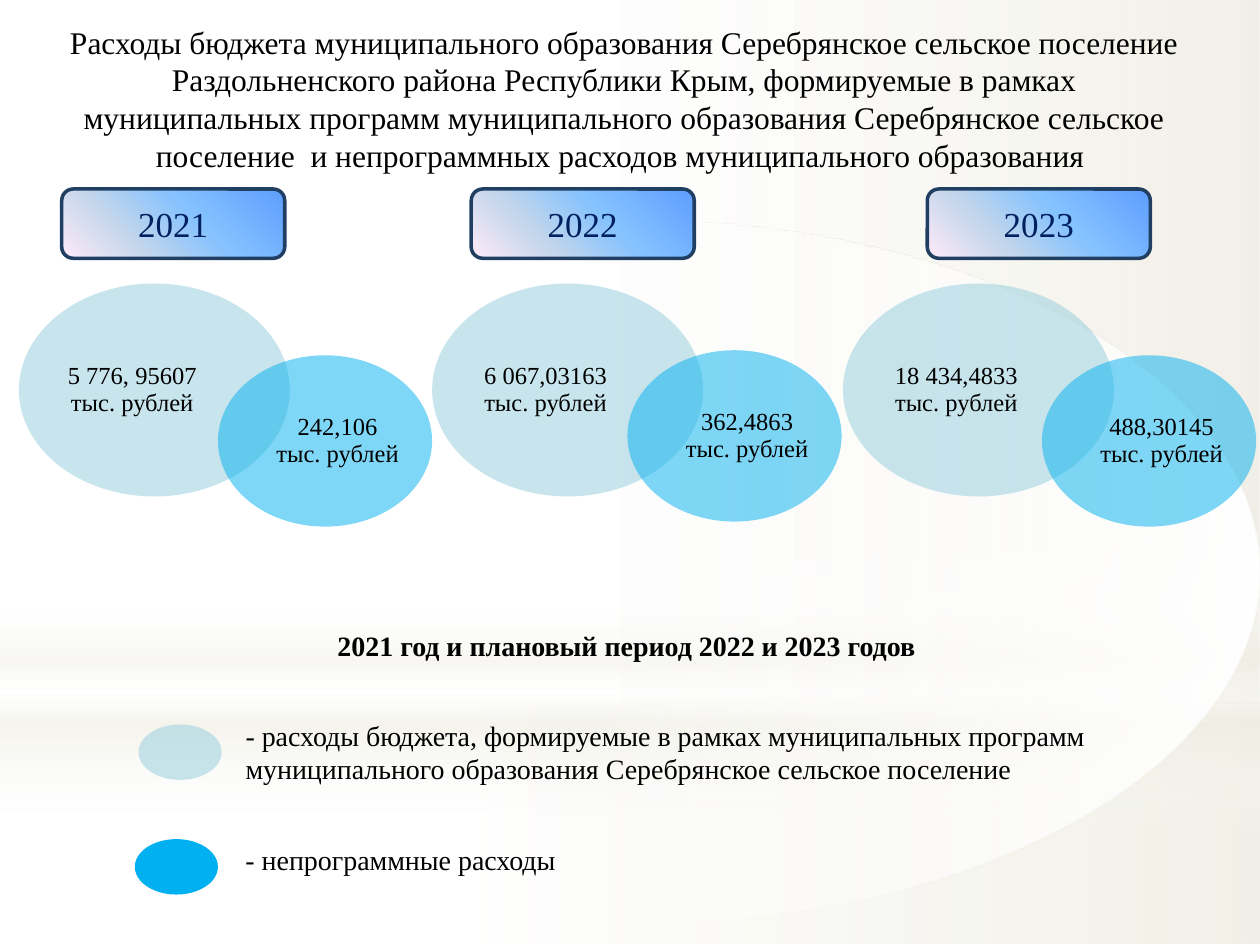
import pptx
import pptx.dml.color
import pptx.enum.shapes
import pptx.enum.text
import pptx.oxml
import pptx.oxml.ns
import pptx.util
from pptx.util import Inches

RGBColor = pptx.dml.color.RGBColor
SHAPE = pptx.enum.shapes.MSO_SHAPE
ALIGN = pptx.enum.text.PP_ALIGN
ANCHOR = pptx.enum.text.MSO_ANCHOR

WHITE = RGBColor(0xFF, 0xFF, 0xFF)
CREAM = RGBColor(0xEE, 0xEC, 0xE1)
BLACK = RGBColor(0, 0, 0)
NAVY = RGBColor(0x00, 0x20, 0x60)
BORDER = RGBColor(0x20, 0x3F, 0x63)
PROGRAM = RGBColor(0x93, 0xCD, 0xDD)
OTHER = RGBColor(0x00, 0xB0, 0xF0)
BADGE_STOPS = [
    (0, RGBColor(0x5E, 0x9E, 0xFF), 100),
    (40, RGBColor(0x85, 0xC2, 0xFF), 100),
    (70, RGBColor(0xC4, 0xD6, 0xEB), 100),
    (100, RGBColor(0xFF, 0xEB, 0xFA), 100),
]
FONT = "Times New Roman"

BACKDROP = [
    (SHAPE.RECTANGLE, (0, 5.58, 10, 1.91), 0,
     [(0, WHITE, 91), (37, WHITE, 76), (100, CREAM, 79)]),
    (SHAPE.RECTANGLE, (0, 0, 10, 5.58), 0,
     [(0, WHITE, 89), (48, WHITE, 62), (100, CREAM, 79)]),
    (SHAPE.RECTANGLE, (0, 4.12, 10, 2.5), 90,
     [(0, WHITE, 0), (29, WHITE, 30), (45, CREAM, 40),
      (55, WHITE, 26), (65, CREAM, 60), (100, WHITE, 0)]),
    (SHAPE.OVAL, (0, 1.75, 10, 5.58), 180, [(0, WHITE, 100), (56, WHITE, 0)]),
]
TITLE = (
    "Расходы бюджета муниципального образования Серебрянское сельское поселение "
    "Раздольненского района Республики Крым, формируемые в рамках муниципальных "
    "программ муниципального образования Серебрянское сельское поселение  и "
    "непрограммных расходов муниципального образования "
)
YEARS = [
    ("2021", 0.49, "5 776, 95607", 0.15, "242,106", (1.73, 2.82)),
    ("2022", 3.74, "6 067,03163", 3.43, "362,4863", (4.98, 2.78)),
    ("2023", 7.36, "18 434,4833", 6.69, "488,30145", (8.27, 2.82)),
]
PROGRAM_NOTE = (
    "- расходы бюджета, формируемые в рамках муниципальных программ "
    "муниципального образования Серебрянское сельское поселение"
)


def add_plain_shape(slide, kind, box):
    """Add a preset shape without shadow or outline."""
    sp = slide.shapes.add_shape(kind, *map(Inches, box))
    sp.shadow.inherit = False
    sp.line.fill.background()
    return sp


def set_gradient(sp, stops, angle):
    """Fill a shape with a linear gradient of (position, colour, opacity) stops."""
    marks = "".join(
        f'<a:gs pos="{pos * 1000}"><a:srgbClr val="{color}">'
        f'<a:alpha val="{opacity * 1000}"/></a:srgbClr></a:gs>'
        for pos, color, opacity in stops
    )
    sp.fill.background()
    spPr = sp._element.spPr
    spPr.replace(spPr.find(pptx.oxml.ns.qn("a:noFill")), pptx.oxml.parse_xml(
        f'<a:gradFill {pptx.oxml.ns.nsdecls("a")} rotWithShape="1">'
        f'<a:gsLst>{marks}</a:gsLst><a:lin ang="{angle * 60000}" scaled="0"/>'
        f'</a:gradFill>'
    ))


def write(sp, text, size, color=BLACK, bold=False, align=ALIGN.LEFT,
          anchor=ANCHOR.TOP, insets=(0.1, 0.05, 0.1, 0.05)):
    """Write one formatted paragraph into a shape."""
    tf = sp.text_frame
    tf.word_wrap = True
    tf.vertical_anchor = anchor
    tf.margin_left, tf.margin_top, tf.margin_right, tf.margin_bottom = map(Inches, insets)
    tf.text = text
    p = tf.paragraphs[0]
    p.alignment = align
    font = p.runs[0].font
    font.name, font.size, font.bold = FONT, pptx.util.Pt(size), bold
    font.color.rgb = color
    return p


def add_text(slide, box, text, size, **style):
    """Add a text box."""
    write(slide.shapes.add_textbox(*map(Inches, box)), text, size, **style)


def add_oval(slide, box, color, opacity=100):
    """Add an oval with a fill of the given opacity."""
    sp = add_plain_shape(slide, SHAPE.OVAL, box)
    set_gradient(sp, [], 0) if color is None else sp.fill.solid()
    sp.fill.fore_color.rgb = color
    if opacity < 100:
        clr = sp._element.spPr.find(".//" + pptx.oxml.ns.qn("a:srgbClr"))
        clr.append(pptx.oxml.parse_xml(
            f'<a:alpha {pptx.oxml.ns.nsdecls("a")} val="{opacity * 1000}"/>'))
    return sp


def add_amount(slide, box, color, amount, insets):
    """Add a translucent oval holding an amount in thousands of roubles."""
    sp = add_oval(slide, box, color, 50)
    p = write(sp, f"{amount} тыс. рублей", 14, align=ALIGN.CENTER,
              anchor=ANCHOR.MIDDLE, insets=insets)
    p.line_spacing = 0.9
    p.space_after = pptx.util.Pt(4.9)


def add_badge(slide, left, year):
    """Add a rounded year badge."""
    sp = add_plain_shape(slide, SHAPE.ROUNDED_RECTANGLE, (left, 1.5, 1.77, 0.55))
    set_gradient(sp, BADGE_STOPS, 135)
    sp.line.color.rgb = BORDER
    sp.line.width = pptx.util.Pt(2)
    write(sp, year, 20, color=NAVY, align=ALIGN.CENTER, anchor=ANCHOR.MIDDLE)


def main():
    """Build the budget expenditure slide."""
    prs = pptx.Presentation()
    prs.slide_width, prs.slide_height = Inches(10), Inches(7.5)
    slide = prs.slides.add_slide(prs.slide_layouts[6])

    for kind, box, angle, stops in BACKDROP:
        set_gradient(add_plain_shape(slide, kind, box), stops, angle)

    add_text(slide, (0.43, 0.13, 9.05, 1.3), TITLE, 18, align=ALIGN.CENTER)
    for year, badge_left, program, program_left, other, other_at in YEARS:
        add_badge(slide, badge_left, year)
        add_amount(slide, (program_left, 2.25, 2.15, 1.69), PROGRAM, program,
                   (0.03, 0.05, 0.38, 0.05))
        add_amount(slide, (*other_at, 1.7, 1.36), OTHER, other, (0.2, 0, 0, 0))

    add_text(slide, (2.58, 4.94, 5.32, 0.36),
             "2021 год и плановый период 2022 и 2023 годов", 16, bold=True)
    add_oval(slide, (1.1, 5.75, 0.66, 0.44), PROGRAM, 50)
    add_text(slide, (1.85, 5.65, 7.72, 0.63), PROGRAM_NOTE, 16)
    add_oval(slide, (1.07, 6.66, 0.66, 0.44), OTHER)
    add_text(slide, (1.85, 6.64, 6.77, 0.36), "- непрограммные расходы", 16)

    prs.save("out.pptx")


if __name__ == "__main__":
    main()
